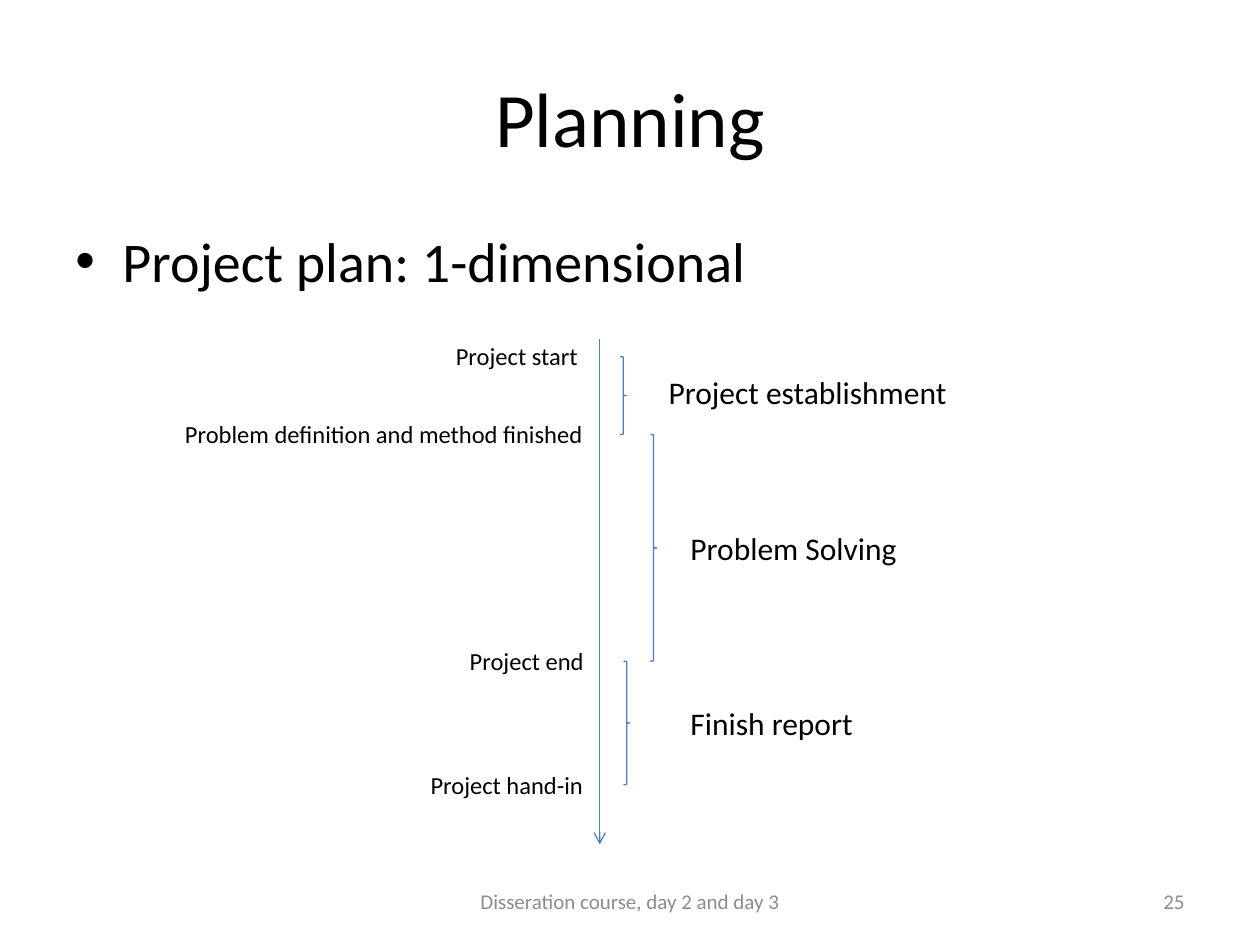
import pptx
import pptx.dml.color
import pptx.enum.shapes
import pptx.enum.text
import pptx.oxml.ns
import pptx.util
from lxml import etree

Cm = pptx.util.Cm
Pt = pptx.util.Pt
RGBColor = pptx.dml.color.RGBColor
Align = pptx.enum.text.PP_ALIGN
Anchor = pptx.enum.text.MSO_ANCHOR
qn = pptx.oxml.ns.qn

BLACK = RGBColor(0x00, 0x00, 0x00)
GREY = RGBColor(0x8C, 0x8C, 0x8C)
BLUE = RGBColor(0x4B, 0x7E, 0xBC)

AXIS_X = 12.09
BRACE_WIDTH = 0.13


def write_text(frame, text, size=18, color=BLACK, font="Calibri",
               align=Align.LEFT, anchor=Anchor.TOP, wrap=True):
    """Fill a text frame with one formatted paragraph and return it."""
    frame.word_wrap = wrap
    frame.auto_size = pptx.enum.text.MSO_AUTO_SIZE.NONE
    frame.vertical_anchor = anchor
    paragraph = frame.paragraphs[0]
    paragraph.alignment = align
    run = paragraph.add_run()
    run.text = text
    run.font.name = font
    run.font.size = Pt(size)
    run.font.color.rgb = color
    return paragraph


class PlanSlide:
    """Current slide and its line style; all lengths are in centimetres."""

    def __init__(self, slide, line_color=BLUE, line_width=0.75):
        self.slide = slide
        self.line_color = line_color
        self.line_width = line_width

    def style_line(self, line):
        line.color.rgb = self.line_color
        line.width = Pt(self.line_width)

    def title(self, text, left, top, width, height):
        title = self.slide.shapes.title
        title.left, title.top = Cm(left), Cm(top)
        title.width, title.height = Cm(width), Cm(height)
        write_text(title.text_frame, text, size=44, align=Align.CENTER,
                   anchor=Anchor.MIDDLE)

    def label(self, text, left, top, width, height, **text_format):
        box = self.slide.shapes.add_textbox(Cm(left), Cm(top), Cm(width), Cm(height))
        return write_text(box.text_frame, text, **text_format)

    def bullet(self, text, left, top, width, height, indent=0.95, **text_format):
        paragraph = self.label(text, left, top, width, height, **text_format)
        properties = paragraph._p.get_or_add_pPr()
        properties.set("marL", str(Cm(indent)))
        properties.set("indent", str(-Cm(indent)))
        etree.SubElement(properties, qn("a:buFont"), typeface="Arial")
        etree.SubElement(properties, qn("a:buChar"), char="•")

    def arrow(self, x, top, bottom):
        arrow = self.slide.shapes.add_connector(
            pptx.enum.shapes.MSO_CONNECTOR.STRAIGHT,
            Cm(x), Cm(top), Cm(x), Cm(bottom))
        self.style_line(arrow.line)
        etree.SubElement(arrow.line._get_or_add_ln(), qn("a:tailEnd"), type="arrow")
        etree.SubElement(arrow._element.spPr, qn("a:effectLst"))

    def brace(self, left, top, bottom):
        brace = self.slide.shapes.add_shape(
            pptx.enum.shapes.MSO_SHAPE.RIGHT_BRACE,
            Cm(left), Cm(top), Cm(BRACE_WIDTH), Cm(bottom - top))
        brace.shadow.inherit = False
        brace.fill.background()
        self.style_line(brace.line)


def main():
    presentation = pptx.Presentation()
    presentation.slide_width = Cm(25.4)
    presentation.slide_height = Cm(19.05)
    plan = PlanSlide(presentation.slides.add_slide(presentation.slide_layouts[5]))

    # Heading and topic
    plan.title("Planning", 1.27, 0.76, 22.86, 3.18)
    plan.bullet("Project plan: 1-dimensional", 1.27, 4.45, 22.86, 14.07, size=32)

    # Time axis
    plan.arrow(AXIS_X, 6.83, 17.02)

    # Milestones left of the axis: text, left, top, width
    milestones = [
        ("Project start", 8.94, 6.76, 3.0),
        ("Problem definition and method finished", 3.48, 8.33, 8.61),
        ("Project end", 9.22, 12.9, 2.84),
        ("Project hand-in", 8.43, 15.39, 3.61),
    ]
    for text, left, top, width in milestones:
        plan.label(text, left, top, width, 0.86, size=14, wrap=False)

    # Phases right of the axis, each brace spanning two milestones
    phase_limits = [7.19, 8.76, 13.33, 15.82]
    phases = [
        ("Project establishment", 12.5, 13.23, 7.39, 6.17),
        ("Problem Solving", 13.11, 13.67, 10.54, 4.72),
        ("Finish report", 12.57, 13.67, 14.07, 3.81),
    ]
    for phase, start, end in zip(phases, phase_limits, phase_limits[1:]):
        text, brace_left, left, top, width = phase
        plan.brace(brace_left, start, end)
        plan.label(text, left, top, width, 1.02, size=18, wrap=False)

    # Footer
    footer_format = dict(size=12, color=GREY, anchor=Anchor.MIDDLE)
    plan.label("25", 18.21, 17.65, 5.92, 1.02, align=Align.RIGHT, **footer_format)
    plan.label("Disseration course, day 2 and day 3", 8.68, 17.65, 8.04, 1.02,
               align=Align.CENTER, **footer_format)

    presentation.save("out.pptx")


if __name__ == "__main__":
    main()
